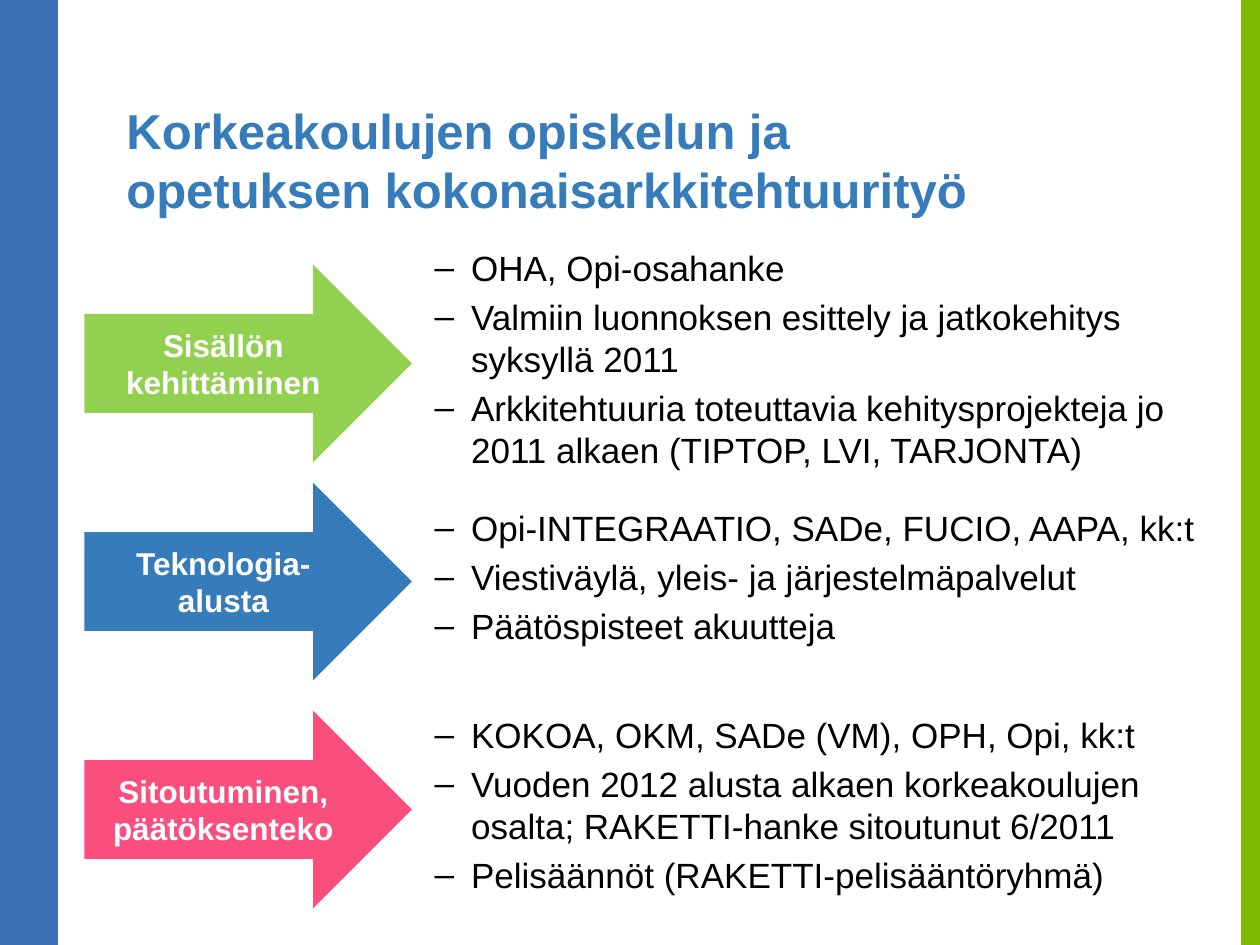
from pptx import Presentation
from pptx.dml.color import RGBColor
from pptx.enum.shapes import MSO_SHAPE
from pptx.enum.text import MSO_ANCHOR, PP_ALIGN
from pptx.oxml.ns import qn
from pptx.util import Pt
from lxml import etree

RECT = MSO_SHAPE.RECTANGLE
ARROW = MSO_SHAPE.RIGHT_ARROW
MIDDLE = MSO_ANCHOR.MIDDLE
LEFT = PP_ALIGN.LEFT
CENTER = PP_ALIGN.CENTER

BAR_BLUE = RGBColor(0x3C, 0x71, 0xB6)
BAR_GREEN = RGBColor(0x7D, 0xBA, 0x00)
BLUE = RGBColor(0x36, 0x7C, 0xBB)
GREEN = RGBColor(0x92, 0xD0, 0x50)
PINK = RGBColor(0xF9, 0x4E, 0x7E)
WHITE = RGBColor(0xFF, 0xFF, 0xFF)
BLACK = RGBColor(0, 0, 0)

WIDTH, HEIGHT = 720, 540

TOPICS = [
    ("Sisällön kehittäminen", GREEN, 151.2, 185, [
        "OHA, Opi-osahanke",
        "Valmiin luonnoksen esittely ja jatkokehitys syksyllä 2011",
        "Arkkitehtuuria toteuttavia kehitysprojekteja jo 2011 alkaen "
        "(TIPTOP, LVI, TARJONTA)",
    ]),
    ("Teknologia- alusta", BLUE, 275.8, 309.6, [
        "Opi-INTEGRAATIO, SADe, FUCIO, AAPA, kk:t",
        "Viestiväylä, yleis- ja järjestelmäpalvelut",
        "Päätöspisteet akuutteja",
    ]),
    ("Sitoutuminen, päätöksenteko", PINK, 406.1, 440, [
        "KOKOA, OKM, SADe (VM), OPH, Opi, kk:t",
        "Vuoden 2012 alusta alkaen korkeakoulujen osalta; "
        "RAKETTI-hanke sitoutunut 6/2011",
        "Pelisäännöt (RAKETTI-pelisääntöryhmä)",
    ]),
]


class Deck:
    font = "Arial"
    title_size = 28
    arrow_size = 18
    list_size = 20
    indent = 20.9
    gap = 4

    def __init__(self, s):
        self.s = s

    def shape(self, kind, x, y, w, h, color):
        sp = self.s.shapes.add_shape(kind, Pt(x), Pt(y), Pt(w), Pt(h))
        sp.shadow.inherit = False
        sp.fill.solid()
        sp.fill.fore_color.rgb = color
        sp.line.fill.background()
        return sp

    def frame(self, sp):
        tf = sp.text_frame
        tf.word_wrap = True
        tf.vertical_anchor = MIDDLE
        return tf

    def textbox(self, x, y, w, h):
        return self.frame(self.s.shapes.add_textbox(Pt(x), Pt(y), Pt(w), Pt(h)))

    def run(self, p, text, size, color, bold=False, align=LEFT):
        p.alignment = align
        r = p.add_run()
        r.text = text
        r.font.name = self.font
        r.font.size = Pt(size)
        r.font.bold = bold
        r.font.color.rgb = color

    def bar(self, x, w, color):
        self.shape(RECT, x, 0, w, HEIGHT, color)

    def title(self, text, x, y, w, h):
        tf = self.textbox(x, y, w, h)
        self.run(tf.paragraphs[0], text, self.title_size, BLUE, True)

    def arrow(self, text, x, y, w, h, color):
        tf = self.frame(self.shape(ARROW, x, y, w, h, color))
        self.run(tf.paragraphs[0], text, self.arrow_size, WHITE, True, CENTER)

    def bullets(self, items, x, y, w, h):
        tf = self.textbox(x, y, w, h)
        for i, text in enumerate(items):
            p = tf.add_paragraph() if i else tf.paragraphs[0]
            pPr = p._p.get_or_add_pPr()
            pPr.set("marL", str(Pt(self.indent)))
            pPr.set("indent", str(-Pt(self.indent)))
            etree.SubElement(pPr, qn("a:buFont")).set("typeface", self.font)
            etree.SubElement(pPr, qn("a:buChar")).set("char", "–")
            p.space_before = Pt(self.gap if i else 0)
            self.run(p, text, self.list_size, BLACK)


def main():
    prs = Presentation()
    prs.slide_width, prs.slide_height = Pt(WIDTH), Pt(HEIGHT)
    deck = Deck(prs.slides.add_slide(prs.slide_layouts[6]))
    deck.bar(0, 33.1, BAR_BLUE)
    deck.bar(709.2, 10.8, BAR_GREEN)
    deck.title("Korkeakoulujen opiskelun ja opetuksen kokonaisarkkitehtuurityö",
               65.2, 65.5, 497.5, 51.1)
    for label, color, arrow_y, list_y, items in TOPICS:
        deck.arrow(label, 48.2, arrow_y, 187.2, 113, color)
        deck.bullets(items, 241.2, list_y, 459.4, 39.6)
    prs.save("out.pptx")


if __name__ == "__main__":
    main()
